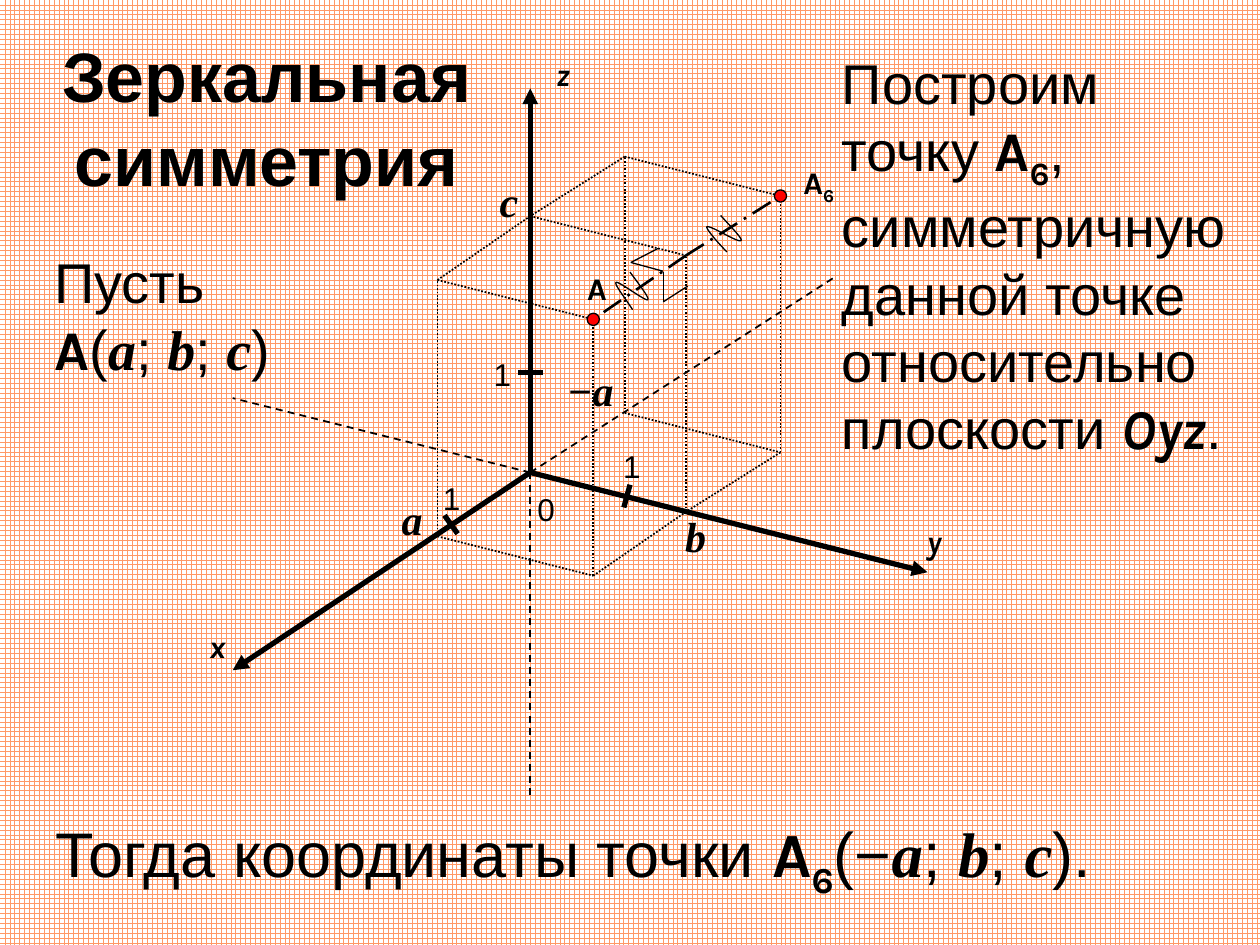
from lxml.etree import SubElement
from pptx import Presentation
from pptx.dml.color import RGBColor
from pptx.enum.dml import MSO_LINE, MSO_PATTERN
from pptx.enum.shapes import MSO_CONNECTOR, MSO_SHAPE
from pptx.enum.text import MSO_ANCHOR, MSO_AUTO_SIZE, PP_ALIGN
from pptx.oxml.ns import qn
from pptx.util import Pt

THEME = {
    "ink": RGBColor(0, 0, 0), "paper": RGBColor(255, 255, 255),
    "grid": RGBColor(0xFF, 0x99, 0x66), "dot": RGBColor(255, 0, 0),
    "title": 40, "body": 32, "result": 36, "label": 18, "value": 24,
    # style: font, bold, italic, baseline shift
    "text": ("Arial", False, False, 0),
    "heading": ("Arial", True, False, 0),
    "point": ("Karla", True, False, 0),
    "index": ("Karla", True, False, -25000),
    "axis": ("Karla", True, True, 0),
    "var": ("Times New Roman", True, True, 0),
}

# Content: text as (words, style) runs
TITLE = [("Зеркальная симметрия", "heading")]
COORDS = [("a", "var"), ("; ", "text"), ("b", "var"), ("; ", "text"), ("c", "var")]
A6 = [("A", "point"), ("6", "index")]
# left, top, width, height, size, runs
TEXTS = [
    (24, 138, 149, 85, "body",
     [("Пусть ", "text"), ("A", "point"), ("(", "text"), *COORDS, (")", "text")]),
    (474, 24, 246, 240, "body",
     [("Построим точку ", "text"), *A6,
      (", симметричную данной точке относительно плоскости ", "text"),
      ("Oyz", "axis"), (".", "text")]),
    (24.5, 462, 677.5, 51, "result",
     [("Тогда координаты точки ", "text"), *A6, ("(−", "text"), *COORDS, (").", "text")]),
    (452, 89.5, 37.5, 29, "label", A6),
]
# words, style, size, left, top, width
LABELS = [
    ("x", "axis", "label", 112.5, 355, 32),
    ("y", "axis", "label", 522.5, 294.5, 32),
    ("z", "axis", "label", 310.5, 28, 32),
    ("0", "text", "label", 300, 276.5, 25),
    ("1", "text", "label", 349, 252, 32),
    ("1", "text", "label", 275, 199.5, 32),
    ("1", "text", "label", 246, 270, 32),
    ("A", "point", "label", 328.5, 150, 25),
    ("a", "var", "value", 222.5, 278.5, 28),
    ("b", "var", "value", 384.5, 288, 28),
    ("c", "var", "value", 278.5, 96.5, 28),
    ("−a", "var", "value", 317, 204.5, 42.5),
]

# Geometry: origin, axis ends, floor offsets of the two boxes
ORIGIN = (303, 270)
AXIS_ENDS = [(133, 383), (530, 327), (303, 50.5)]
BACK_ENDS = [(476, 159), (133, 227.5), (303, 456)]
SIDE_B, HEIGHT = (89, 22.5), 146.5
SIDES_A = [(-53, 36.5), (54, -34)]
TICKS = [((296, 213), (310.5, 213)), ((356.5, 290), (360, 277)),
         ((254, 294.5), (261.5, 305))]
RIGHT_ANGLES = [((379, 172.5), (379, 155.5)), ((379, 172.5), (393, 163.5)),
                ((360.5, 150), (379, 155)), ((360.5, 150), (376, 142))]
# Equal-length marks: start, then control, control, end of each curve
EQUAL_MARKS = [
    [(361.5, 177), (356.4, 169.2), (350.6, 162), (352.1, 161.3), (353.5, 160.6),
     (368.6, 172.1), (370.1, 171.4), (371.5, 170.6), (365.8, 163.4), (360, 155.5)],
    [(415.4, 144), (409, 137.5), (403.2, 130.3), (403.9, 129.6), (405.4, 128.2),
     (421.9, 139), (423.4, 137.5), (424.8, 136.8), (418.3, 130.3), (411.8, 123.1)],
]

prs = Presentation()
prs.slide_width, prs.slide_height = Pt(720), Pt(540)
s = prs.slides.add_slide(prs.slide_layouts[5])


def shift(point, offset):
    return point[0] + offset[0], point[1] + offset[1]


def up(point):
    return point[0], point[1] - HEIGHT


def line(start, end, width, dash=None, arrow=False):
    c = s.shapes.add_connector(MSO_CONNECTOR.STRAIGHT, *map(Pt, (*start, *end)))
    c.line.color.rgb = THEME["ink"]
    c.line.width = Pt(width)
    if dash:
        c.line.dash_style = dash
    if arrow:
        SubElement(c.line._get_or_add_ln(), qn("a:tailEnd"), type="triangle")
    SubElement(c._element.spPr, qn("a:effectLst"))


def outline(shape):
    shape.shadow.inherit = False
    shape.line.color.rgb = THEME["ink"]
    shape.line.width = Pt(0.75)


def write(shape, runs, size, align=PP_ALIGN.LEFT):
    tf = shape.text_frame
    tf.word_wrap = True
    tf.auto_size = MSO_AUTO_SIZE.NONE
    tf.vertical_anchor = MSO_ANCHOR.TOP
    p = tf.paragraphs[0]
    p.alignment = align
    for words, style in runs:
        r = p.add_run()
        r.text = words
        name, bold, italic, base = THEME[style]
        r.font.name, r.font.bold, r.font.italic = name, bold, italic
        r.font.size = Pt(THEME[size])
        r.font.color.rgb = THEME["ink"]
        if base:
            r._r.get_or_add_rPr().set("baseline", str(base))


def bezier(p0, p1, p2, p3, steps=10):
    for t in (i / steps for i in range(1, steps + 1)):
        u = 1 - t
        yield tuple(Pt(u**3 * a + 3 * u * u * t * b + 3 * u * t * t * c + t**3 * d)
                    for a, b, c, d in zip(p0, p1, p2, p3))


# Background
fill = s.background.fill
fill.patterned()
fill.pattern = MSO_PATTERN.LARGE_GRID
fill.fore_color.rgb, fill.back_color.rgb = THEME["grid"], THEME["paper"]

# Title
title = s.shapes.title
title.left, title.top, title.width, title.height = map(Pt, (16.5, 15, 271.5, 104.5))
write(title, TITLE, "title", PP_ALIGN.CENTER)

# Axes with unit ticks
for end in BACK_ENDS:
    line(ORIGIN, end, 1, MSO_LINE.DASH)
for end in AXIS_ENDS:
    line(ORIGIN, end, 3, arrow=True)
for tick in TICKS:
    line(*tick, 3)

# Coordinate boxes on both sides of the plane Oyz
b = shift(ORIGIN, SIDE_B)
edges, points = [(ORIGIN, b, True), (b, up(b), False)], []
for side in SIDES_A:
    a = shift(ORIGIN, side)
    ab = shift(a, SIDE_B)
    points.append(up(ab))
    edges += [(a, ab, False), (ab, b, False), (a, up(a), False), (ab, up(ab), False)]
    edges += [(up(a), up(ab), False), (up(a), up(ORIGIN), False)]
for start, end, on_top in edges:
    if on_top:
        start, end = up(start), up(end)
    line(start, end, 1, MSO_LINE.ROUND_DOT)

# Segment from A to its mirror point, with marks
for point in points:
    line(up(b), point, 1.5, MSO_LINE.LONG_DASH_DOT)
for mark in RIGHT_ANGLES:
    line(*mark, 0.75)
for mark in EQUAL_MARKS:
    fb = s.shapes.build_freeform(*map(Pt, mark[0]))
    for i in range(0, len(mark) - 1, 3):
        fb.add_line_segments(list(bezier(*mark[i:i + 4])), close=False)
    curve = fb.convert_to_shape()
    curve.fill.background()
    outline(curve)
for x, y in points:
    dot = s.shapes.add_shape(MSO_SHAPE.OVAL, *map(Pt, (x - 3.5, y - 3.5, 7, 7)))
    dot.fill.solid()
    dot.fill.fore_color.rgb = THEME["dot"]
    outline(dot)

# Texts and labels
labels = [(x, y, w, THEME[size] * 1.2 + 7.2, size, [(words, style)])
          for words, style, size, x, y, w in LABELS]
for *box, size, runs in TEXTS + labels:
    write(s.shapes.add_textbox(*map(Pt, box)), runs, size)

prs.save("out.pptx")
